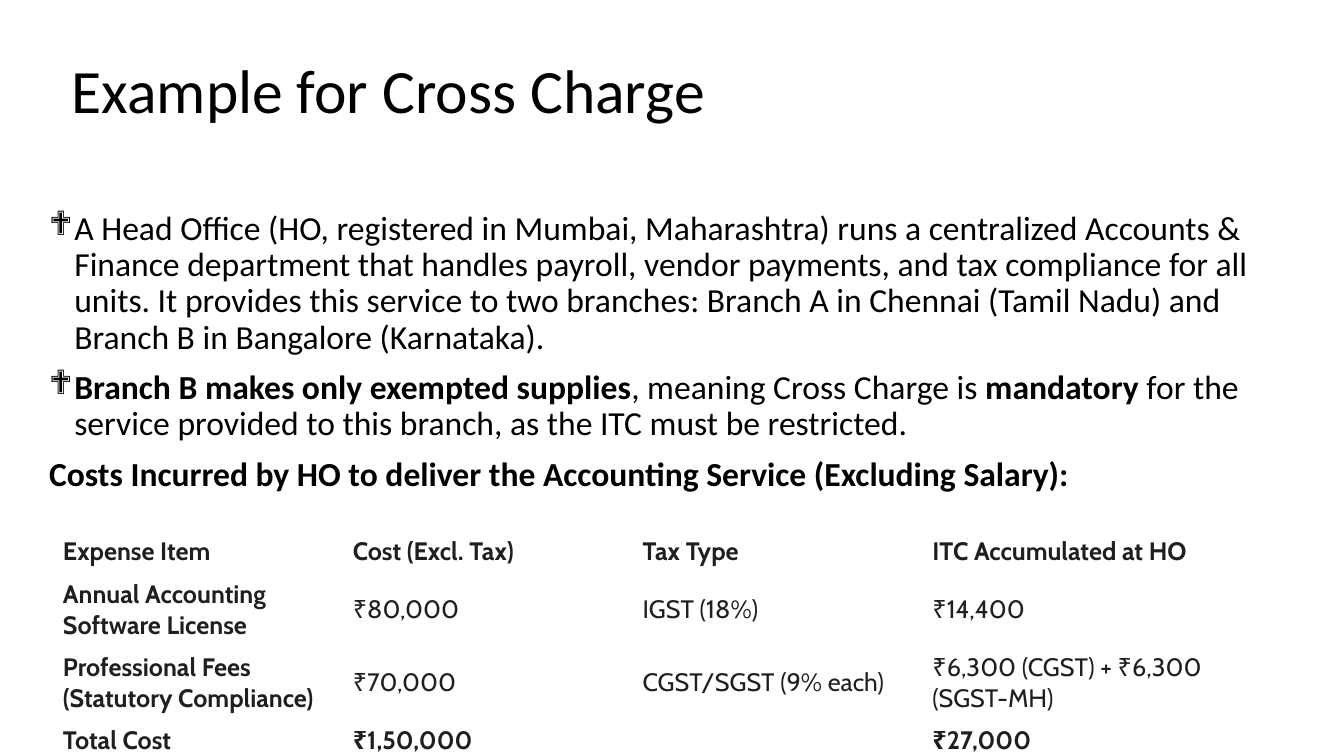
from dataclasses import dataclass

from lxml import etree
from pptx import Presentation
from pptx import util as u
from pptx.dml import color
from pptx.enum import text
from pptx.oxml import ns

TITLE = "Example for Cross Charge"
BODY = [
    ("❖", [("A Head Office (HO, registered in Mumbai, Maharashtra) runs a centralized "
            "Accounts & Finance department that handles payroll, vendor payments, and tax "
            "compliance for all units. It provides this service to two branches: Branch A in "
            "Chennai (Tamil Nadu) and Branch B in Bangalore (Karnataka).", False)]),
    ("❖", [("Branch B makes only exempted supplies", True),
           (", meaning Cross Charge is ", False),
           ("mandatory", True),
           (" for the service provided to this branch, as the ITC must be restricted.", False)]),
    (None, [("Costs Incurred by HO to deliver the Accounting Service (Excluding Salary):", True)]),
]
COSTS = [
    ("Expense Item", "Cost (Excl. Tax)", "Tax Type", "ITC Accumulated at HO"),
    ("Annual Accounting Software License", "₹80,000", "IGST (18%)", "₹14,400"),
    ("Professional Fees (Statutory Compliance)", "₹70,000", "CGST/SGST (9% each)",
     "₹6,300 (CGST) + ₹6,300 (SGST-MH)"),
    ("Total Cost", "₹1,50,000", "", "₹27,000"),
]
ROW_HEIGHTS = [30, 51, 51, 30]
COLUMN_WIDTH = 207
BULLET_INDENT = 18


@dataclass(frozen=True)
class Theme:
    main_font: str = "Calibri"
    table_font: str = "Cabin"
    ink: str = "000000"
    table_ink: str = "1F1F1F"
    border: str = "FFFFFF"
    title_size: int = 44
    body_size: int = 24
    table_size: int = 18
    border_width: float = 0.5


THEME = Theme()


def assign(target, values):
    for name, value in values.items():
        setattr(target, name, value)


def place(target, left, top, width, height):
    assign(target, {"left": u.Pt(left), "top": u.Pt(top),
                    "width": u.Pt(width), "height": u.Pt(height)})


def add_span(para, words, font, size, ink, bold=False):
    span = para.add_run()
    span.text = words
    assign(span.font, {"name": font, "size": u.Pt(size), "bold": bold})
    span.font.color.rgb = color.RGBColor.from_string(ink)


def add_title(page):
    title = page.shapes.title
    place(title, 44, 29, 878, 76)
    assign(title.text_frame, {"vertical_anchor": text.MSO_ANCHOR.MIDDLE, "word_wrap": True})
    para = title.text_frame.paragraphs[0]
    assign(para, {"alignment": text.PP_ALIGN.LEFT, "line_spacing": 0.9})
    add_span(para, TITLE, THEME.main_font, THEME.title_size, THEME.ink)


def add_bullet(para, mark):
    settings = para._p.get_or_add_pPr()
    settings.set("marL", str(u.Pt(BULLET_INDENT)))
    settings.set("indent", str(-u.Pt(BULLET_INDENT)))
    etree.SubElement(settings, ns.qn("a:buFont"), typeface="Wingdings")
    etree.SubElement(settings, ns.qn("a:buChar"), char=mark)


def add_body(page):
    box = page.shapes.add_textbox(u.Pt(28), u.Pt(147.5), u.Pt(893.5), u.Pt(296))
    box.text_frame.word_wrap = True
    for index, (mark, spans) in enumerate(BODY):
        para = box.text_frame.add_paragraph() if index else box.text_frame.paragraphs[0]
        assign(para, {"line_spacing": 0.9, "space_before": u.Pt(10)})
        if mark:
            add_bullet(para, mark)
        for words, bold in spans:
            add_span(para, words, THEME.main_font, THEME.body_size, THEME.ink, bold)


def add_borders(cell):
    settings = cell._tc.get_or_add_tcPr()
    for index, side in enumerate(("lnL", "lnR", "lnT", "lnB")):
        line = etree.Element(ns.qn(f"a:{side}"), w=str(u.Pt(THEME.border_width)))
        fill = etree.SubElement(line, ns.qn("a:solidFill"))
        etree.SubElement(fill, ns.qn("a:srgbClr"), val=THEME.border)
        settings.insert(index, line)


def add_costs(page):
    columns = len(COSTS[0])
    table = page.shapes.add_table(len(COSTS), columns, u.Pt(39), u.Pt(378.5),
                                  u.Pt(COLUMN_WIDTH * columns), u.Pt(sum(ROW_HEIGHTS))).table
    assign(table, {"first_row": False, "horz_banding": False})
    for row, height in zip(table.rows, ROW_HEIGHTS):
        row.height = u.Pt(height)
    for row_index, row in enumerate(COSTS):
        for column_index, words in enumerate(row):
            cell = table.cell(row_index, column_index)
            cell.fill.background()
            add_borders(cell)
            assign(cell, {"margin_left": u.Pt(6), "margin_right": u.Pt(6),
                          "margin_top": u.Pt(4.5), "margin_bottom": u.Pt(4.5),
                          "vertical_anchor": text.MSO_ANCHOR.MIDDLE})
            if words:
                bold = column_index == 0 or row_index in (0, len(COSTS) - 1)
                add_span(cell.text_frame.paragraphs[0], words, THEME.table_font,
                         THEME.table_size, THEME.table_ink, bold)


def main():
    deck = Presentation()
    assign(deck, {"slide_width": u.Pt(960), "slide_height": u.Pt(540)})
    page = deck.slides.add_slide(deck.slide_layouts.get_by_name("Title Only"))
    add_title(page)
    add_body(page)
    add_costs(page)
    deck.save("out.pptx")


if __name__ == "__main__":
    main()
